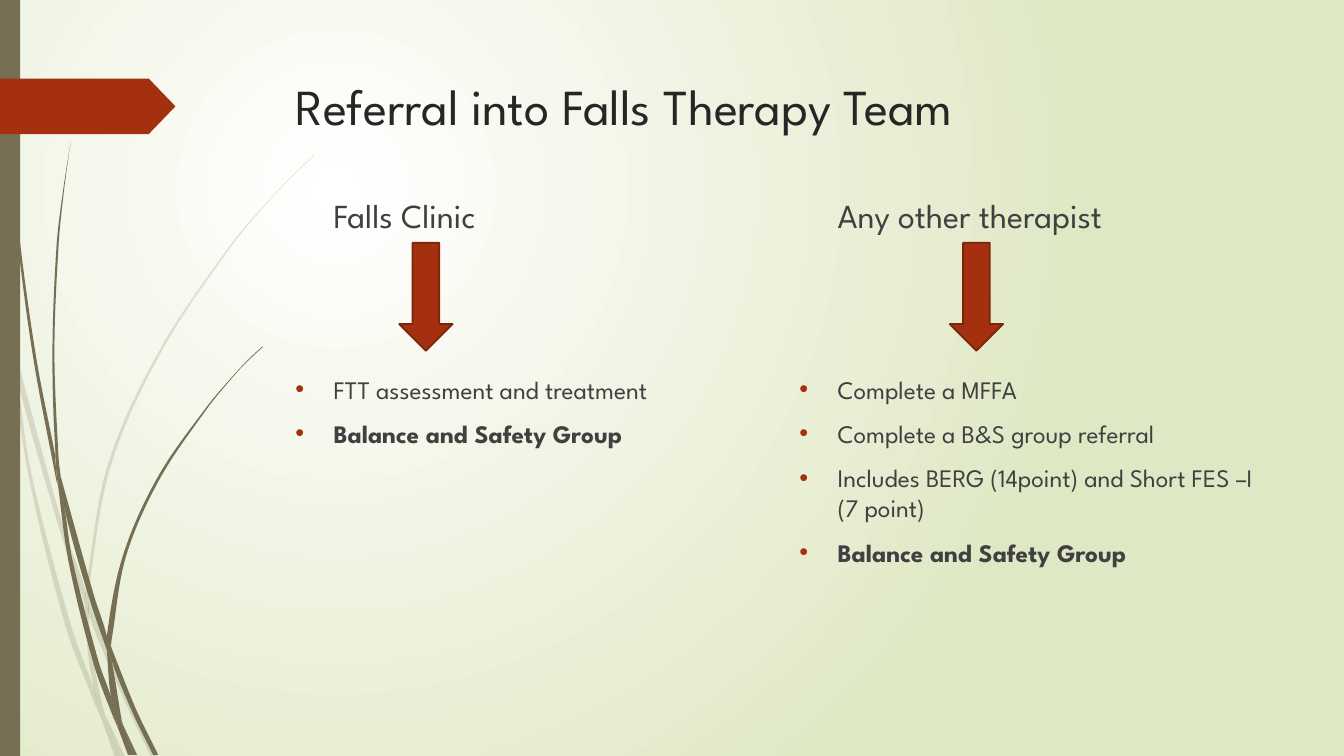
from dataclasses import dataclass
from math import dist

from lxml import etree
from pptx import Presentation
from pptx.dml.color import RGBColor
from pptx.enum import shapes, text
from pptx.oxml import ns
from pptx.util import Inches, Pt


@dataclass(frozen=True)
class Theme:
    font: str = "League Spartan"
    rust: str = "A53010"
    rust_edge: str = "7A240C"
    stem: str = "766F54"
    title_ink: str = "262626"
    body_ink: str = "404040"
    glow: tuple = ("FFFFFF", "DFE8C4")
    title_size: int = 36
    heading_size: int = 24
    bullet_size: int = 18


THEME = Theme()
TITLE = "Referral into Falls Therapy Team"
GROUP = "Balance and Safety Group"
ROUTES = [
    {"heading": "Falls Clinic", "left": 2.83, "arrow": 3.96,
     "steps": ["FTT assessment and treatment", GROUP]},
    {"heading": "Any other therapist", "left": 7.83, "arrow": 9.42,
     "steps": ["Complete a MFFA", "Complete a B&S group referral",
               "Includes BERG (14point) and Short FES –I (7 point)", GROUP]},
]
PALE_BLADES = [
    [(0.11, 3.5), (0.09, 3.22), (0, 2.82), (0, 2.99), (0.1, 3.44)],
    [(0.58, 5.22), (0.84, 5.99), (0.85, 5.86), (0.62, 5.2), (0.14, 3.45), (0.17, 3.76)],
    [(0.92, 6.07), (0.88, 5.96), (0.88, 6.1), (1.23, 6.94), (1.5, 7.51), (1.55, 7.51),
     (1.27, 6.92)],
    [(1.19, 7.51), (1.24, 7.51), (1.05, 7.11)],
    [(0.93, 6.83), (0.7, 6.19), (0.31, 4.69), (0.17, 3.76), (0.11, 3.5), (0.28, 4.7),
     (0.65, 6.21), (0.92, 6.93), (1.01, 7.14), (0.99, 7.07)],
    [(0.84, 5.99), (0.87, 6.46), (0.93, 6.83), (0.96, 6.92), (1.05, 7.11), (1.03, 7.06),
     (0.91, 6.46), (0.88, 6.1), (0.88, 6.08)],
    [(0.88, 5.84), (1.1, 4.62), (1.6, 3.49), (2.29, 2.45), (2.68, 1.98), (2.9, 1.75),
     (3.12, 1.54), (3.12, 1.53), (2.89, 1.75), (2.68, 1.97), (2.28, 2.44), (1.58, 3.48),
     (1.07, 4.61), (0.85, 5.84), (0.85, 5.86), (0.88, 5.96)],
    [(1.01, 7.14), (1.14, 7.51), (1.19, 7.51)],
    [(0.88, 6.08), (0.88, 6.1), (0.88, 5.96), (0.85, 5.86), (0.84, 5.99)],
    [(0.96, 6.92), (0.93, 6.83), (0.99, 7.07), (1.01, 7.14), (1.19, 7.51), (1.05, 7.11)],
]
DARK_BLADES = [
    [(0.07, 1.1), (0.17, 2.33), (0.33, 3.55), (0.56, 4.77), (0.57, 4.81), (0.55, 4.57),
     (0.55, 4.53), (0.36, 3.55), (0.19, 2.32), (0.08, 1.09), (0.05, 0.48), (0.04, 0),
     (0.03, 0), (0.04, 0.48)],
    [(0.88, 5.92), (1.06, 6.45), (1.06, 6.31), (0.93, 5.9), (0.6, 4.72), (0.64, 5.05)],
    [(1.13, 6.49), (1.1, 6.41), (1.11, 6.56), (1.32, 7.08), (1.52, 7.49), (1.57, 7.49),
     (1.36, 7.06)],
    [(1.1, 6.91), (0.98, 6.57), (0.72, 5.56), (0.64, 5.05), (0.57, 4.77), (0.68, 5.57),
     (0.93, 6.59), (1.11, 7.08), (1.17, 7.22), (1.16, 7.17)],
    [(0.6, 4.72), (0.58, 4.53), (0.54, 3.49), (0.58, 2.45), (0.63, 1.93), (0.7, 1.41),
     (0.62, 1.93), (0.56, 2.45), (0.52, 3.49), (0.55, 4.49)],
    [(1.33, 7.49), (1.36, 7.49), (1.22, 7.19)],
    [(0.57, 4.77), (0.64, 5.05), (0.6, 4.72), (0.55, 4.49), (0.55, 4.53)],
    [(1.11, 6.33), (1.25, 5.52), (1.58, 4.76), (2.05, 4.06), (2.31, 3.74), (2.45, 3.59),
     (2.61, 3.44), (2.6, 3.44), (2.45, 3.58), (2.31, 3.73), (2.04, 4.05), (1.56, 4.74),
     (1.22, 5.51), (1.06, 6.31), (1.1, 6.41)],
    [(1.17, 7.22), (1.27, 7.49), (1.31, 7.49)],
    [(1.06, 6.45), (1.1, 6.91), (1.16, 7.06), (1.22, 7.19), (1.21, 7.16), (1.11, 6.56),
     (1.09, 6.51)],
    [(1.06, 6.45), (1.09, 6.51), (1.11, 6.56), (1.1, 6.41), (1.06, 6.31)],
    [(1.16, 7.06), (1.1, 6.91), (1.16, 7.17), (1.17, 7.22), (1.3, 7.49), (1.33, 7.49),
     (1.22, 7.19)],
]


def colour(code):
    return RGBColor.from_string(code)


def paint(shape, fill, edge=None, opacity=None):
    shape.shadow.inherit = False
    shape.fill.solid()
    shape.fill.fore_color.rgb = colour(fill)
    if edge:
        shape.line.color.rgb = colour(edge)
        shape.line.width = Pt(1.25)
    else:
        shape.line.fill.background()
    if opacity:
        tint = shape.fill._xPr.find(".//" + ns.qn("a:srgbClr"))
        etree.SubElement(tint, ns.qn("a:alpha"), val=str(opacity * 1000))


def add_preset(page, kind, bounds, fill, edge=None):
    shape = page.shapes.add_shape(kind, *map(Inches, bounds))
    paint(shape, fill, edge)
    return shape


def unit(start, end):
    length = dist(start, end)
    return [(b - a) / length for a, b in zip(start, end)]


def curve_handles(knots):
    handles = []
    for index, knot in enumerate(knots):
        before, after = knots[index - 1], knots[(index + 1) % len(knots)]
        arrive, leave = unit(before, knot), unit(knot, after)
        if sum(a * b for a, b in zip(arrive, leave)) > 0.5:
            arrive = leave = unit(before, after)
        handles.append((
            [k - d * dist(before, knot) / 3 for k, d in zip(knot, arrive)],
            [k + d * dist(knot, after) / 3 for k, d in zip(knot, leave)]))
    return handles


def add_blade(page, knots, opacity=None):
    outline = [(Inches(x), Inches(y)) for x, y in knots]
    builder = page.shapes.build_freeform(*outline[0])
    builder.add_line_segments(outline[1:] + outline[:1], close=True)
    blade = builder.convert_to_shape()
    handles = curve_handles(outline)
    for index, line in enumerate(blade._element.findall(".//" + ns.qn("a:lnTo"))):
        following = (index + 1) % len(outline)
        curve = etree.Element(ns.qn("a:cubicBezTo"))
        for x, y in (handles[index][1], handles[following][0], outline[following]):
            etree.SubElement(curve, ns.qn("a:pt"),
                             x=str(round(x - blade.left)), y=str(round(y - blade.top)))
        line.getparent().replace(line, curve)
    paint(blade, THEME.stem, opacity=opacity)


def style(para, size, ink, bold=False):
    para.alignment = text.PP_ALIGN.LEFT
    para.font.name = THEME.font
    para.font.size = Pt(size)
    para.font.bold = bold
    para.font.color.rgb = colour(ink)


def add_bullet(para):
    props = para._p.get_or_add_pPr()
    props.set("marL", str(Inches(0.38)))
    props.set("indent", str(-Inches(0.38)))
    tint = etree.SubElement(props, ns.qn("a:buClr"))
    etree.SubElement(tint, ns.qn("a:srgbClr"), val=THEME.rust)
    etree.SubElement(props, ns.qn("a:buFont"), typeface="Arial")
    etree.SubElement(props, ns.qn("a:buChar"), char="•")


def add_lines(page, bounds, lines, size, bulleted=False):
    frame = page.shapes.add_textbox(*map(Inches, bounds)).text_frame
    frame.word_wrap = True
    frame.text = "\n".join(lines)
    for index, para in enumerate(frame.paragraphs):
        style(para, size, THEME.body_ink, bold=para.text == GROUP)
        if index:
            para.space_before = Pt(10)
        if bulleted:
            add_bullet(para)


def set_background(page):
    fill = page.background.fill
    fill.gradient()
    for stop, position, code in zip(fill.gradient_stops, (0, 1), THEME.glow):
        stop.color.rgb = colour(code)
        stop.position = position
    gradient = page._element.find(".//" + ns.qn("a:gradFill"))
    gradient.remove(gradient.find(ns.qn("a:lin")))
    circle = etree.SubElement(gradient, ns.qn("a:path"))
    circle.set("path", "circle")
    etree.SubElement(circle, ns.qn("a:fillToRect"), l="50000", t="50000", r="100000", b="100000")


def add_title(page):
    title = page.shapes.title
    title.left, title.top, title.width, title.height = map(Inches, (2.83, 0.69, 9.75, 1.4))
    title.text_frame.text = TITLE
    title.text_frame.vertical_anchor = text.MSO_ANCHOR.TOP
    style(title.text_frame.paragraphs[0], THEME.title_size, THEME.title_ink)


def main():
    deck = Presentation()
    deck.slide_width, deck.slide_height = Inches(13.33), Inches(7.5)
    page = deck.slides.add_slide(deck.slide_layouts[5])
    set_background(page)
    for blades, opacity in ((PALE_BLADES, 20), (DARK_BLADES, None)):
        for knots in blades:
            add_blade(page, knots, opacity)
    kinds = shapes.MSO_SHAPE
    add_preset(page, kinds.RECTANGLE, (0, 0, 0.2, 7.5), THEME.stem)
    tag = add_preset(page, kinds.PENTAGON, (0, 0.78, 1.74, 0.55), THEME.rust)
    tag.adjustments[0] = 0.48
    add_title(page)
    for route in ROUTES:
        left = route["left"]
        add_lines(page, (left + 0.38, 1.88, 4.37, 0.63), [route["heading"]], THEME.heading_size)
        add_lines(page, (left, 3.66, 4.75, 2.78), route["steps"], THEME.bullet_size, bulleted=True)
        add_preset(page, kinds.DOWN_ARROW, (route["arrow"], 2.41, 0.53, 1.07),
                   THEME.rust, THEME.rust_edge)
    deck.save("out.pptx")


if __name__ == "__main__":
    main()
